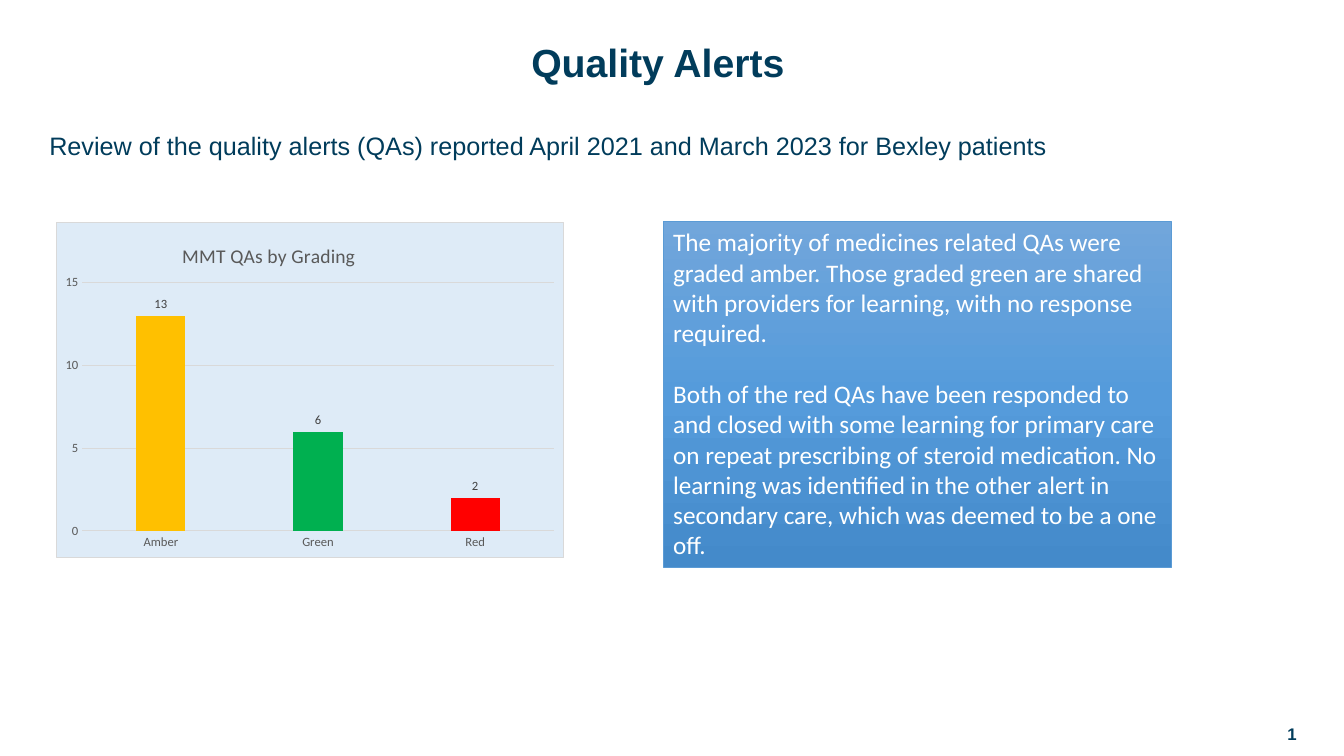
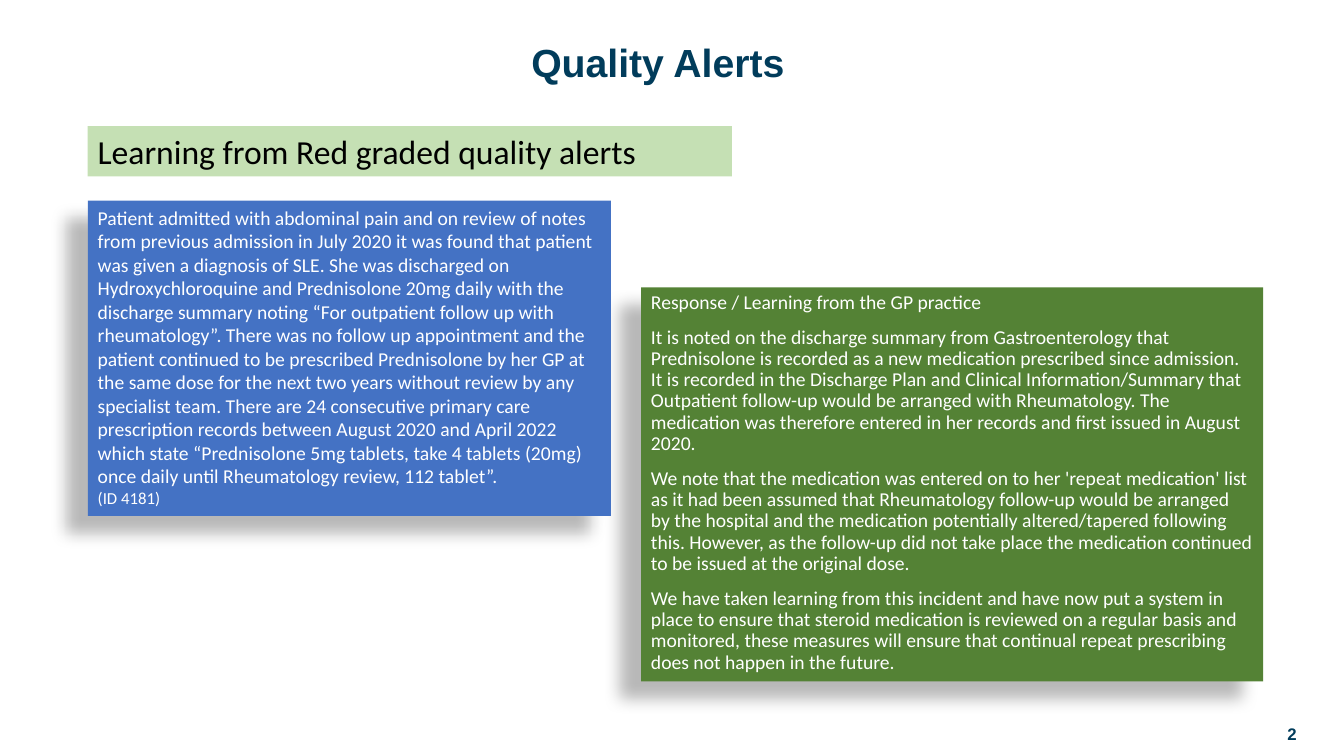
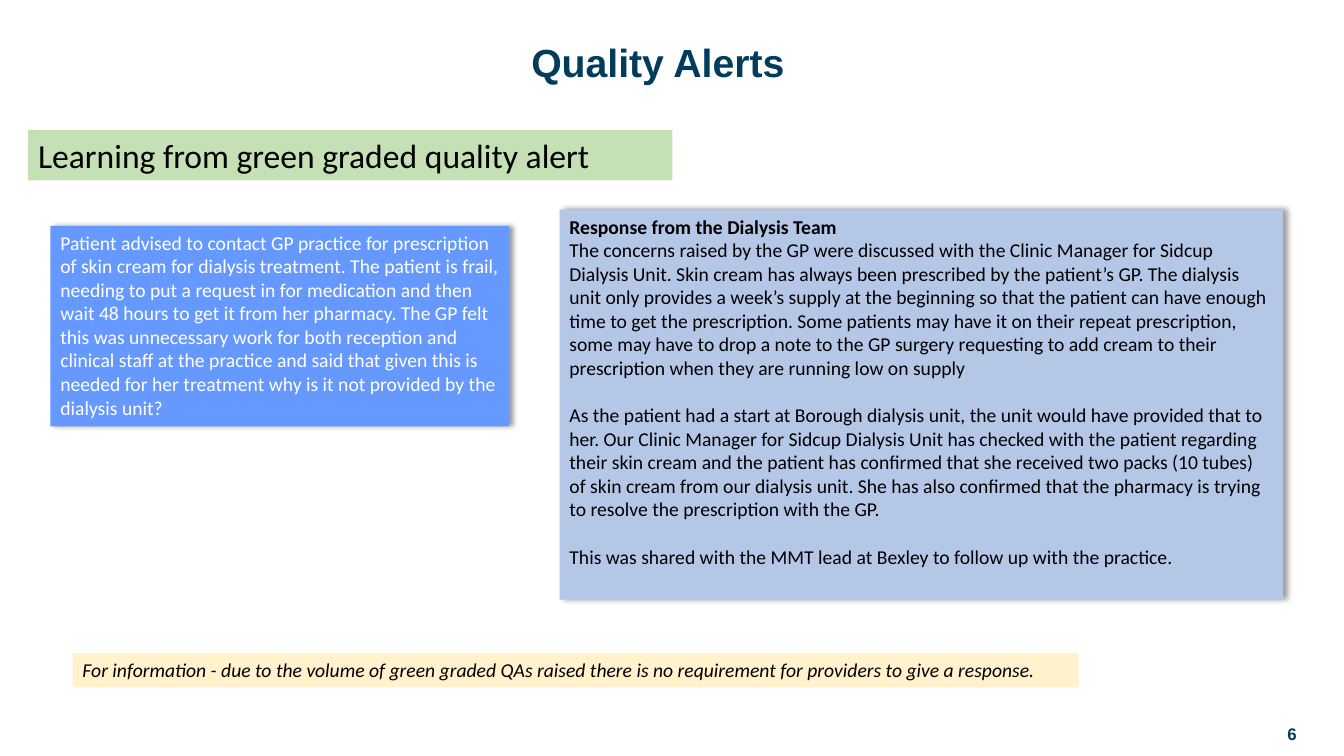
from dataclasses import dataclass
from typing import NamedTuple, Optional

from lxml.etree import SubElement
from pptx import Presentation
from pptx.chart.chart import Chart
from pptx.chart.data import CategoryChartData
from pptx.dml.color import RGBColor
from pptx.enum.chart import XL_CHART_TYPE, XL_LABEL_POSITION, XL_TICK_MARK
from pptx.enum.shapes import MSO_SHAPE
from pptx.enum.text import MSO_ANCHOR, PP_ALIGN
from pptx.oxml import parse_xml
from pptx.oxml.ns import nsdecls, qn
from pptx.slide import Slide
from pptx.util import Inches, Pt

SLIDE_WIDTH, SLIDE_HEIGHT = Inches(13.33), Inches(7.5)
COLOURS = {
    "navy": "013C5B", "white": "FFFFFF", "black": "000000",
    "heading": "C5E0B4", "blue": "4472C4", "green": "548235",
    "sky": "6699FF", "pale blue": "B4C7E7", "cream": "FFF2CC",
    "chart": "DEEBF7", "rule": "D9D9D9", "axis text": "595959",
    "label": "404040", "outline": "5B9BD5", "amber bar": "FFC000",
    "green bar": "00B050", "red bar": "FF0000",
    "light": "71A6DB", "middle": "559BDB", "deep": "448ACA",
}


class Place(NamedTuple):
    """Left, top, width and height as percentages of the slide."""
    left: float
    top: float
    width: float
    height: float

    def lengths(self) -> tuple[int, int, int, int]:
        return (int(SLIDE_WIDTH * self.left / 100), int(SLIDE_HEIGHT * self.top / 100),
                int(SLIDE_WIDTH * self.width / 100), int(SLIDE_HEIGHT * self.height / 100))


class Shadow(NamedTuple):
    opacity: int
    blur: float
    distance: float
    angle: int


class Line(NamedTuple):
    text: str
    size: int = 14
    before: int = 0
    bold: bool = False
    italic: bool = False


@dataclass
class Card:
    place: Place
    lines: list[Line]
    fill: Optional[str] = None
    colour: str = "white"
    font: str = "Calibri"
    spacing: float = 1.0
    shadow: Optional[Shadow] = None
    align: PP_ALIGN = PP_ALIGN.LEFT
    anchor: MSO_ANCHOR = MSO_ANCHOR.TOP


TITLE_PLACE = Place(18.08, 3.73, 61.73, 9.6)
NUMBER_PLACE = Place(83.33, 94.4, 13.88, 5.33)
DEEP_SHADOW = Shadow(28, 11.8, 19.7, 141)
SOFT_SHADOW = Shadow(40, 4, 3, 0)


def rgb(name: str) -> RGBColor:
    return RGBColor.from_string(COLOURS[name])


# Text and cards
def write(shape, card: Card) -> None:
    frame = shape.text_frame
    frame.word_wrap = True
    frame.vertical_anchor = card.anchor
    frame.text = "\n".join(line.text for line in card.lines)
    for para, line in zip(frame.paragraphs, card.lines):
        para.alignment = card.align
        para.line_spacing = card.spacing
        para.space_before = Pt(line.before)
        for span in para.runs:
            span.font.name = card.font
            span.font.size = Pt(line.size)
            span.font.bold = line.bold
            span.font.italic = line.italic
            span.font.color.rgb = rgb(card.colour)


def add_shadow(shape, shadow: Shadow) -> None:
    effects = shape.element.spPr.find(qn("a:effectLst"))
    outer = SubElement(effects, qn("a:outerShdw"), blurRad=str(Pt(shadow.blur)),
                       dist=str(Pt(shadow.distance)), dir=str(shadow.angle * 60000),
                       algn="ctr", rotWithShape="0")
    colour = SubElement(outer, qn("a:srgbClr"), val=COLOURS["black"])
    SubElement(colour, qn("a:alpha"), val=str(shadow.opacity * 1000))


def add_card(page: Slide, card: Card):
    if card.fill is None:
        box = page.shapes.add_textbox(*card.place.lengths())
    else:
        box = page.shapes.add_shape(MSO_SHAPE.RECTANGLE, *card.place.lengths())
        box.shadow.inherit = False
        box.fill.solid()
        box.fill.fore_color.rgb = rgb(card.fill)
        box.line.fill.background()
    if card.shadow:
        add_shadow(box, card.shadow)
    write(box, card)
    return box


def add_gradient(box, names: list[str]) -> None:
    stops = "".join(
        f'<a:gs pos="{100000 * index // (len(names) - 1)}">'
        f'<a:srgbClr val="{COLOURS[name]}"/></a:gs>' for index, name in enumerate(names))
    gradient = parse_xml(f'<a:gradFill {nsdecls("a")} rotWithShape="1"><a:gsLst>{stops}</a:gsLst>'
                         '<a:lin ang="5400000" scaled="0"/></a:gradFill>')
    solid = box.element.spPr.find(qn("a:solidFill"))
    solid.getparent().replace(solid, gradient)
    box.line.color.rgb = rgb("outline")
    box.line.width = Pt(0.5)


def heading(left: float, top: float, text: str) -> Card:
    return Card(Place(left, top, 47.93, 6.67), [Line(text, 24)], "heading", "black")


# Page with the shared title and number
def add_page(deck, number: int, cards: list[Card]) -> Slide:
    page = deck.slides.add_slide(deck.slide_layouts[5])
    title = page.shapes.title
    title.left, title.top, title.width, title.height = TITLE_PLACE.lengths()
    write(title, Card(TITLE_PLACE, [Line("Quality Alerts", 28, bold=True)], colour="navy",
                      font="Arial", spacing=0.9, align=PP_ALIGN.CENTER, anchor=MSO_ANCHOR.MIDDLE))
    add_card(page, Card(NUMBER_PLACE, [Line(str(number), 12, bold=True)], colour="navy",
                        font="Arial", align=PP_ALIGN.RIGHT, anchor=MSO_ANCHOR.MIDDLE))
    for card in cards:
        add_card(page, card)
    return page


# Chart
def set_layout(parent, **shares: float) -> None:
    current = parent.find(qn("c:layout"))
    if current is not None:
        parent.remove(current)
    inner = '<c:layoutTarget val="inner"/>' if "w" in shares else ""
    modes = "".join(f'<c:{key}Mode val="edge"/>' for key in ("x", "y"))
    values = "".join(f'<c:{key} val="{share}"/>' for key, share in shares.items())
    layout = parse_xml(f'<c:layout {nsdecls("c")}><c:manualLayout>{inner}{modes}{values}'
                       '</c:manualLayout></c:layout>')
    parent.insert(0 if parent.find(qn("c:tx")) is None else 1, layout)


def set_font(font, size: int, colour: str) -> None:
    font.name = "Calibri"
    font.size = Pt(size)
    font.bold = False
    font.color.rgb = rgb(colour)


def style_axes(chart: Chart) -> None:
    for axis in (chart.category_axis, chart.value_axis):
        axis.major_tick_mark = axis.minor_tick_mark = XL_TICK_MARK.NONE
        set_font(axis.tick_labels.font, 9, "axis text")
    values = chart.value_axis
    values.minimum_scale, values.maximum_scale, values.major_unit = 0, 15, 5
    values.format.line.fill.background()
    for line in (chart.category_axis.format.line, values.major_gridlines.format.line):
        line.color.rgb = rgb("rule")
        line.width = Pt(0.75)


def add_grading_chart(page: Slide, place: Place) -> None:
    data = CategoryChartData()
    data.categories = ["Amber", "Green", "Red"]
    data.add_series("Series 1", [13, 6, 2])
    chart = page.shapes.add_chart(XL_CHART_TYPE.COLUMN_CLUSTERED, *place.lengths(), data).chart
    chart.has_legend = False
    set_font(chart.font, 10, "black")
    title = chart.chart_title
    title.text_frame.text = "MMT QAs by Grading"
    set_font(title.text_frame.paragraphs[0].runs[0].font, 14, "axis text")
    set_layout(title.element, x=0.24, y=0.05)
    set_layout(chart.element.find(".//" + qn("c:plotArea")), x=0.05, y=0.18, w=0.93, h=0.74)
    style_axes(chart)

    plot = chart.plots[0]
    plot.vary_by_categories = False
    plot.gap_width, plot.overlap = 219, -27
    plot.has_data_labels = True
    labels = plot.data_labels
    labels.show_value = True
    labels.position = XL_LABEL_POSITION.OUTSIDE_END
    set_font(labels.font, 9, "label")
    for index, name in enumerate(["amber bar", "green bar", "red bar"]):
        fill = plot.series[0].points[index].format.fill
        fill.solid()
        fill.fore_color.rgb = rgb(name)

    # Chart background and border
    background = parse_xml(
        f'<c:spPr {nsdecls("c", "a")}><a:solidFill><a:srgbClr val="{COLOURS["chart"]}"/></a:solidFill>'
        f'<a:ln w="{Pt(0.75)}"><a:solidFill><a:srgbClr val="{COLOURS["rule"]}"/></a:solidFill></a:ln>'
        '</c:spPr>')
    chart.element.find(qn("c:txPr")).addprevious(background)


# Slide contents
INTRO = Card(Place(2.93, 17.07, 92.93, 6.67), [
    Line("Review of the quality alerts (QAs) reported April 2021 and March 2023 for Bexley patients", 18),
], colour="navy", font="Arial", spacing=0.9)

SUMMARY = Card(Place(49.35, 29.33, 37.8, 45.73), [
    Line("The majority of medicines related QAs were graded amber. Those graded green are shared "
         "with providers for learning, with no response required.", 18),
    Line("Both of the red QAs have been responded to and closed with some learning for primary care "
         "on repeat prescribing of steroid medication. No learning was identified in the other alert "
         "in secondary care, which was deemed to be a one off.", 18, before=22),
], "middle")

RED_CARDS = [
    Card(Place(47.7, 38, 46.28, 52.13), [
        Line("Response / Learning from the GP practice"),
        Line("It is noted on the discharge summary from Gastroenterology that Prednisolone is recorded "
             "as a new medication prescribed since admission. It is recorded in the Discharge Plan and "
             "Clinical Information/Summary that Outpatient follow-up would be arranged with "
             "Rheumatology. The medication was therefore entered in her records and first issued in "
             "August 2020.", before=10),
        Line("We note that the medication was entered on to her 'repeat medication' list as it had been "
             "assumed that Rheumatology follow-up would be arranged by the hospital and the medication "
             "potentially altered/tapered following this. However, as the follow-up did not take place "
             "the medication continued to be issued at the original dose.", before=10),
        Line("We have taken learning from this incident and have now put a system in place to ensure "
             "that steroid medication is reviewed on a regular basis and monitored, these measures "
             "will ensure that continual repeat prescribing does not happen in the future.", before=10),
    ], "green", spacing=0.9, shadow=DEEP_SHADOW),
    Card(Place(6.53, 26.53, 38.93, 41.73), [
        Line("Patient admitted with abdominal pain and on review of notes from previous admission in "
             "July 2020 it was found that patient was given a diagnosis of SLE. She was discharged on "
             "Hydroxychloroquine and Prednisolone 20mg daily with the discharge summary noting “For "
             "outpatient follow up with rheumatology”. There was no follow up appointment and the "
             "patient continued to be prescribed Prednisolone by her GP at the same dose for the next "
             "two years without review by any specialist team. There are 24 consecutive primary care "
             "prescription records between August 2020 and April 2022 which state “Prednisolone 5mg "
             "tablets, take 4 tablets (20mg) once daily until Rheumatology review, 112 tablet”."),
        Line("(ID 4181)", 12),
    ], "blue", shadow=DEEP_SHADOW),
    heading(6.53, 16.67, "Learning from Red graded quality alerts"),
]

GREEN_CARDS = [
    Card(Place(3.75, 29.87, 34.13, 26.53), [
        Line("Patient advised to contact GP practice for prescription of skin cream for dialysis "
             "treatment. The patient is frail, needing to put a request in for medication and then "
             "wait 48 hours to get it from her pharmacy. The GP felt this was unnecessary work for "
             "both reception and clinical staff at the practice and said that given this is needed "
             "for her treatment why is it not provided by the dialysis unit?"),
    ], "sky", shadow=SOFT_SHADOW),
    Card(Place(41.63, 27.73, 53.85, 51.6), [
        Line("Response from the Dialysis Team", bold=True),
        Line("The concerns raised by the GP were discussed with the Clinic Manager for Sidcup Dialysis "
             "Unit. Skin cream has always been prescribed by the patient’s GP. The dialysis unit only "
             "provides a week’s supply at the beginning so that the patient can have enough time to "
             "get the prescription. Some patients may have it on their repeat prescription, some may "
             "have to drop a note to the GP surgery requesting to add cream to their prescription when "
             "they are running low on supply"),
        Line("As the patient had a start at Borough dialysis unit, the unit would have provided that to "
             "her. Our Clinic Manager for Sidcup Dialysis Unit has checked with the patient regarding "
             "their skin cream and the patient has confirmed that she received two packs (10 tubes) of "
             "skin cream from our dialysis unit. She has also confirmed that the pharmacy is trying to "
             "resolve the prescription with the GP.", before=17),
        Line("This was shared with the MMT lead at Bexley to follow up with the practice.", before=17),
    ], "pale blue", "black", shadow=SOFT_SHADOW),
    heading(2.1, 17.2, "Learning from green graded quality alert"),
    Card(Place(5.4, 86.4, 74.85, 4.53), [
        Line("For information - due to the volume of green graded QAs raised there is no requirement "
             "for providers to give a response.", italic=True),
    ], "cream", "black"),
]


def main() -> None:
    deck = Presentation()
    deck.slide_width, deck.slide_height = SLIDE_WIDTH, SLIDE_HEIGHT
    overview = add_page(deck, 1, [INTRO])
    add_grading_chart(overview, Place(4.2, 29.33, 37.8, 44.53))
    add_gradient(add_card(overview, SUMMARY), ["light", "middle", "deep"])
    add_page(deck, 2, RED_CARDS)
    add_page(deck, 6, GREEN_CARDS)
    deck.save("out.pptx")


if __name__ == "__main__":
    main()
